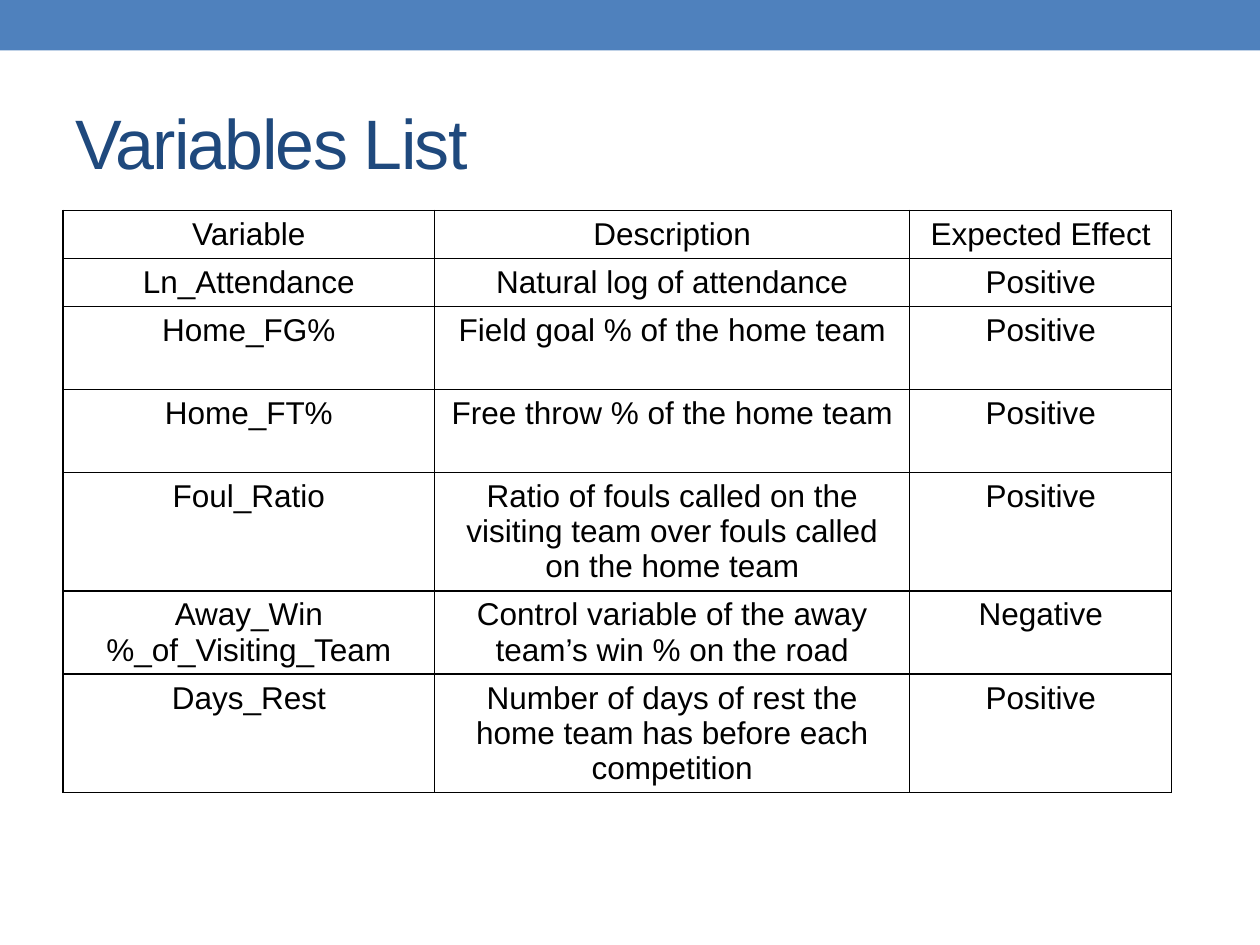
from dataclasses import dataclass

from lxml import etree
from pptx import Presentation
from pptx import util as u
from pptx.dml.color import RGBColor
from pptx.enum import shapes, text
from pptx.oxml import ns


@dataclass(frozen=True)
class Theme:
    font: str = "Arial"
    band: str = "4F81BD"
    heading: str = "1F497D"
    ink: str = "000000"
    heading_size: int = 40
    table_size: int = 18
    border_width: int = 1
    heading_spacing: int = -1


class SlideBuilder:
    def __init__(self, page, theme):
        self.page = page
        self.theme = theme

    def style(self, paragraph, size, color, align):
        paragraph.alignment = align
        paragraph.font.name = self.theme.font
        paragraph.font.size = u.Pt(size)
        paragraph.font.color.rgb = RGBColor.from_string(color)

    def band(self, left, top, width, height):
        box = self.page.shapes.add_shape(
            shapes.MSO_SHAPE.RECTANGLE, *map(u.Inches, (left, top, width, height)))
        box.shadow.inherit = False
        box.fill.solid()
        box.fill.fore_color.rgb = RGBColor.from_string(self.theme.band)
        box.line.fill.background()

    def title(self, words, left, top, width, height):
        box = self.page.shapes.title
        box.left, box.top, box.width, box.height = map(
            u.Inches, (left, top, width, height))
        frame = box.text_frame
        frame.text = words
        frame.vertical_anchor = text.MSO_ANCHOR.MIDDLE
        paragraph = frame.paragraphs[0]
        self.style(paragraph, self.theme.heading_size, self.theme.heading,
                   text.PP_ALIGN.LEFT)
        for span in paragraph.runs:
            span._r.get_or_add_rPr().set("spc", str(self.theme.heading_spacing * 100))

    def border(self, cell):
        properties = cell._tc.get_or_add_tcPr()
        for index, side in enumerate(("lnL", "lnR", "lnT", "lnB")):
            line = etree.Element(ns.qn(f"a:{side}"),
                                 w=str(u.Pt(self.theme.border_width)))
            fill = etree.SubElement(line, ns.qn("a:solidFill"))
            etree.SubElement(fill, ns.qn("a:srgbClr"), val=self.theme.ink)
            properties.insert(index, line)

    def table(self, rows, left, top, widths, heights):
        table = self.page.shapes.add_table(
            len(rows), len(widths), u.Inches(left), u.Inches(top),
            u.Inches(sum(widths)), u.Inches(sum(heights))).table
        table.first_row = table.horz_banding = False
        for column, width in zip(table.columns, widths):
            column.width = u.Inches(width)
        for row, height, values in zip(table.rows, heights, rows):
            row.height = u.Inches(height)
            for cell, words in zip(row.cells, values):
                cell.text = words
                cell.fill.background()
                self.border(cell)
                for paragraph in cell.text_frame.paragraphs:
                    self.style(paragraph, self.theme.table_size, self.theme.ink,
                               text.PP_ALIGN.CENTER)


VARIABLES = [
    ("Variable", "Description", "Expected Effect"),
    ("Ln_Attendance", "Natural log of attendance", "Positive"),
    ("Home_FG%", "Field goal % of the home team", "Positive"),
    ("Home_FT%", "Free throw % of the home team", "Positive"),
    ("Foul_Ratio",
     "Ratio of fouls called on the visiting team over fouls called on the home team",
     "Positive"),
    ("Away_Win\n%_of_Visiting_Team",
     "Control variable of the away team’s win % on the road", "Negative"),
    ("Days_Rest",
     "Number of days of rest the home team has before each competition", "Positive"),
]
COLUMN_WIDTHS = (2.95, 3.77, 2.08)
ONE_LINE, TWO_LINES, THREE_LINES = 0.38, 0.66, 0.94
ROW_HEIGHTS = (ONE_LINE, ONE_LINE, TWO_LINES, TWO_LINES,
               THREE_LINES, TWO_LINES, THREE_LINES)


def main():
    deck = Presentation()
    deck.slide_width, deck.slide_height = u.Inches(10), u.Inches(7.5)
    page = deck.slides.add_slide(deck.slide_layouts[5])
    builder = SlideBuilder(page, Theme())
    builder.band(0, 0, 10, 0.4)
    builder.title("Variables List", 0.5, 0.58, 9, 1.08)
    builder.table(VARIABLES, 0.5, 1.67, COLUMN_WIDTHS, ROW_HEIGHTS)
    deck.save("out.pptx")


if __name__ == "__main__":
    main()
